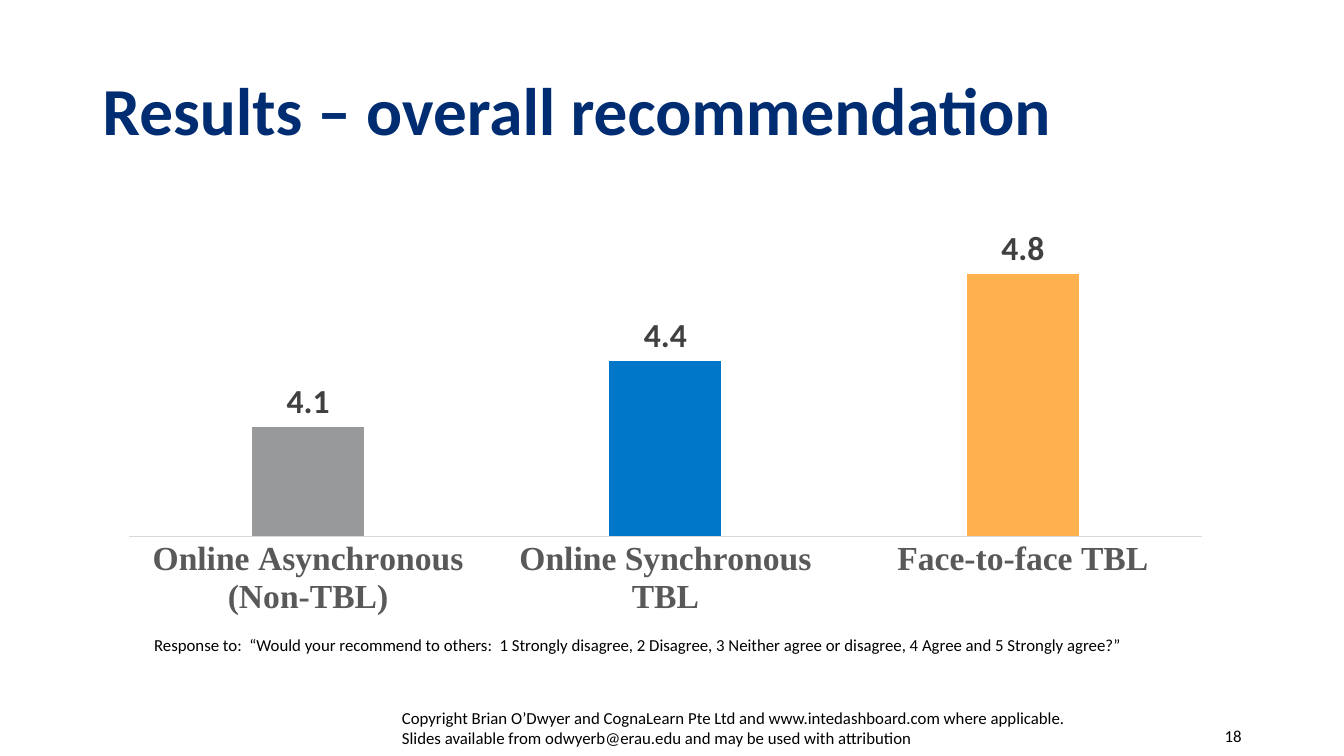
from lxml import etree
from pptx import Presentation
from pptx.chart.data import CategoryChartData
from pptx.dml.color import RGBColor
from pptx.enum import chart as ch, text
from pptx.oxml import ns
from pptx.util import Pt

NAVY = RGBColor(0x00, 0x2D, 0x72)
BLACK = RGBColor(0x00, 0x00, 0x00)
GREY = RGBColor(0x97, 0x99, 0x9B)
BLUE = RGBColor(0x00, 0x77, 0xC8)
ORANGE = RGBColor(0xFF, 0xB1, 0x4D)
AXIS_TEXT = RGBColor(0x59, 0x59, 0x59)
AXIS_LINE = RGBColor(0xD9, 0xD9, 0xD9)
LABEL_TEXT = RGBColor(0x40, 0x40, 0x40)


class Deck:
    body_font = "Calibri"
    axis_font = "Times New Roman"

    def __init__(self, prs):
        self.s = prs.slides.add_slide(prs.slide_layouts[5])

    def style(self, font, size, color, bold=False, name=None):
        font.name = name or self.body_font
        font.size = Pt(size)
        font.color.rgb = color
        font.bold = bold

    def place(self, sp, box):
        sp.left, sp.top, sp.width, sp.height = map(Pt, box)

    def fill_text(self, tf, content, size, color, bold=False, spacing=None,
                  align=text.PP_ALIGN.LEFT, anchor=text.MSO_ANCHOR.TOP):
        tf.text = content
        tf.word_wrap = True
        tf.auto_size = text.MSO_AUTO_SIZE.NONE
        tf.vertical_anchor = anchor
        for p in tf.paragraphs:
            p.alignment = align
            p.line_spacing = spacing
            for r in p.runs:
                self.style(r.font, size, color, bold)

    def title(self, box, content):
        sp = self.s.shapes.title
        self.place(sp, box)
        self.fill_text(sp.text_frame, content, 48, NAVY, True, 0.9,
                       anchor=text.MSO_ANCHOR.MIDDLE)

    def note(self, box, content, margin_top=3.6, **layout):
        tf = self.s.shapes.add_textbox(*map(Pt, box)).text_frame
        tf.margin_top = Pt(margin_top)
        self.fill_text(tf, content, 12, BLACK, **layout)

    def column_chart(self, box, scores, colors, low, high):
        data = CategoryChartData()
        data.categories = scores.keys()
        data.add_series("Series 1", scores.values())
        chart = self.s.shapes.add_chart(
            ch.XL_CHART_TYPE.COLUMN_CLUSTERED, *map(Pt, box), data).chart
        chart.has_legend = chart.has_title = False
        self.style(chart.font, 10, BLACK)

        cats = chart.category_axis
        cats.major_tick_mark = cats.minor_tick_mark = ch.XL_TICK_MARK.NONE
        cats.format.line.color.rgb = AXIS_LINE
        cats.format.line.width = Pt(0.75)
        self.style(cats.tick_labels.font, 24, AXIS_TEXT, True, self.axis_font)
        vals = chart.value_axis
        vals.minimum_scale, vals.maximum_scale = low, high
        vals.has_major_gridlines = False
        vals.visible = False

        plot = chart.plots[0]
        plot.vary_by_categories = False
        plot.gap_width, plot.overlap = 219, -27
        series = plot.series[0]
        for i, color in enumerate(colors):
            fill = series.points[i].format.fill
            fill.solid()
            fill.fore_color.rgb = color
        labels = series.data_labels
        labels.show_value = True
        labels.position = ch.XL_LABEL_POSITION.OUTSIDE_END
        self.style(labels.font, 24, LABEL_TEXT, True)
        self.fix_plot_area(chart, x=0, y=0, w=0.97, h=0.78)

    def fix_plot_area(self, chart, **fractions):
        """Pin the inner plot area to fractions of the chart frame."""
        area = chart._chartSpace.chart.plotArea
        for old in area.findall(ns.qn("c:layout")):
            area.remove(old)
        layout = etree.Element(ns.qn("c:layout"))
        area.insert(0, layout)
        manual = etree.SubElement(layout, ns.qn("c:manualLayout"))
        settings = {"layoutTarget": "inner", "xMode": "edge", "yMode": "edge",
                    **fractions}
        for tag, value in settings.items():
            etree.SubElement(manual, ns.qn("c:" + tag), val=str(value))


def main():
    prs = Presentation()
    prs.slide_width, prs.slide_height = Pt(960), Pt(540)
    deck = Deck(prs)
    deck.title((66, 28.8, 828, 104.4), "Results – overall recommendation")
    deck.note((861, 500.4, 33, 28.8), "18", margin_top=18.2,
              align=text.PP_ALIGN.RIGHT)
    deck.note((280, 502, 570, 28.8),
              "Copyright Brian O’Dwyer and CognaLearn Pte Ltd and "
              "www.intedashboard.com where applicable.\n"
              "Slides available from odwyerb@erau.edu and may be used with "
              "attribution")
    scores = {"Online Asynchronous (Non-TBL)": 4.1,
              "Online Synchronous TBL": 4.4,
              "Face-to-face TBL": 4.8}
    deck.column_chart((92, 163.5, 790, 281.5), scores, (GREY, BLUE, ORANGE),
                      low=3.6, high=5)
    deck.note((103, 445.7, 754, 31.7),
              "Response to:  “Would your recommend to others:  "
              "1 Strongly disagree, 2 Disagree, 3 Neither agree or disagree, "
              "4 Agree and 5 Strongly agree?”",
              spacing=0.9, anchor=text.MSO_ANCHOR.MIDDLE)
    prs.save("out.pptx")


if __name__ == "__main__":
    main()
